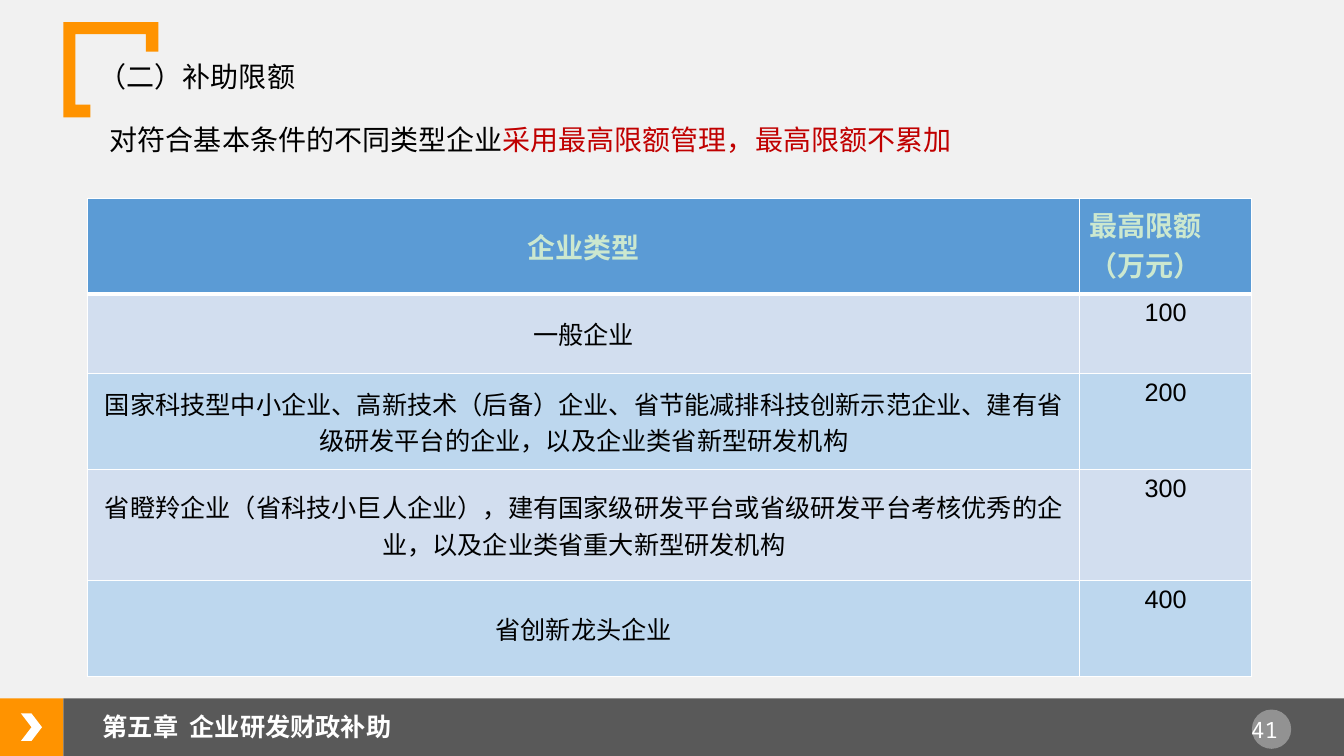
from lxml.etree import SubElement
from pptx import Presentation
from pptx.dml.color import RGBColor
from pptx.enum.shapes import MSO_SHAPE as Preset
from pptx.enum.text import MSO_ANCHOR as Anchor, PP_ALIGN as Align
from pptx.oxml.ns import qn
from pptx.util import Cm, Pt

COLORS = {
    "page": "F1F1F1", "orange": "FF9300", "bar": "595959", "white": "FFFFFF",
    "black": "000000", "red": "C00000", "pale": "CCE8CF", "head": "5B9BD5",
    "odd": "D2DEEF", "even": "BDD7EE",
}
LATIN, CHINESE, MONO = "Arial", "Noto Sans CJK SC", "Noto Sans Mono"

LIMITS = [
    ("企业类型", "最高限额\n（万元）"),
    ("一般企业", "100"),
    ("国家科技型中小企业、高新技术（后备）企业、省节能减排科技创新示范企业、建有省\n"
     "级研发平台的企业，以及企业类省新型研发机构", "200"),
    ("省瞪羚企业（省科技小巨人企业），建有国家级研发平台或省级研发平台考核优秀的企\n"
     "业，以及企业类省重大新型研发机构", "300"),
    ("省创新龙头企业", "400"),
]
COLUMN_WIDTHS = (25, 4.33)
ROW_HEIGHTS = (2.41, 2.01, 2.41, 2.8, 2.41)


def color(name):
    return RGBColor.from_string(COLORS[name])


class SlideBuilder:
    """Holds the text style and the current slide."""

    def __init__(self, slide, font=LATIN):
        self.slide = slide
        self.font = font
        slide.background.fill.solid()
        slide.background.fill.fore_color.rgb = color("page")

    def format_run(self, run, size, ink, bold=False, font=None):
        run.font.size, run.font.bold = Pt(size), bold
        run.font.name = font or self.font
        run.font.color.rgb = color(ink)
        SubElement(run.font._element, qn("a:ea"), typeface=CHINESE)

    def paint(self, shape, fill, alpha=None):
        shape.shadow.inherit = False
        shape.fill.solid()
        shape.fill.fore_color.rgb = color(fill)
        shape.line.fill.background()
        if alpha:
            tint = shape.fill._xPr.find(qn("a:solidFill"))[0]
            SubElement(tint, qn("a:alpha"), val=str(alpha * 1000))

    def shape(self, preset, left, top, width, height, fill, alpha=None):
        box = (Cm(v) for v in (left, top, width, height))
        self.paint(self.slide.shapes.add_shape(preset, *box), fill, alpha)

    def outline(self, points, fill):
        corners = [(Cm(x), Cm(y)) for x, y in points]
        builder = self.slide.shapes.build_freeform(*corners[0])
        builder.add_line_segments(corners[1:], close=True)
        self.paint(builder.convert_to_shape(), fill)

    def title(self, text, left, top, width, height, size):
        heading = self.slide.shapes.title
        heading.left, heading.top = Cm(left), Cm(top)
        heading.width, heading.height = Cm(width), Cm(height)
        frame = heading.text_frame
        frame.text = text
        frame.vertical_anchor, frame.margin_left = Anchor.TOP, Cm(0.41)
        line = frame.paragraphs[0]
        line.alignment, line.line_spacing = Align.LEFT, 0.9
        self.format_run(line.runs[0], size, "black", font=CHINESE)

    def text(self, parts, left, top, width, height, size,
             bold=False, font=None, align=Align.LEFT):
        box = (Cm(v) for v in (left, top, width, height))
        frame = self.slide.shapes.add_textbox(*box).text_frame
        frame.word_wrap = True
        line = frame.paragraphs[0]
        line.alignment = align
        for words, ink in parts:
            run = line.add_run()
            run.text = words
            self.format_run(run, size, ink, bold, font)

    def border(self, cell, bottom):
        props = cell._tc.get_or_add_tcPr()
        for place, (side, width) in enumerate(
                (("lnL", 1), ("lnR", 1), ("lnT", 1), ("lnB", bottom))):
            edge = props.makeelement(qn(f"a:{side}"), {"w": str(Pt(width))})
            fill = SubElement(edge, qn("a:solidFill"))
            SubElement(fill, qn("a:srgbClr"), val=COLORS["white"])
            props.insert(place, edge)

    def table(self, rows, left, top, widths, heights):
        size = (Cm(sum(widths)), Cm(sum(heights)))
        grid = self.slide.shapes.add_table(
            len(rows), len(widths), Cm(left), Cm(top), *size).table
        for column, width in zip(grid.columns, widths):
            column.width = Cm(width)
        for r, (row, height) in enumerate(zip(rows, heights)):
            grid.rows[r].height = Cm(height)
            header = r == 0
            band = "head" if header else ("even", "odd")[r % 2]
            for c, words in enumerate(row):
                cell = grid.cell(r, c)
                cell.fill.solid()
                cell.fill.fore_color.rgb = color(band)
                cell.vertical_anchor = Anchor.TOP if c else Anchor.MIDDLE
                # The rule under the header is heavier, seen from both rows
                self.border(cell, 3 if header else 1)
                if r == 1:
                    cell._tc.tcPr.find(qn("a:lnT")).set("w", str(Pt(3)))
                cell.text_frame.text = words
                for line in cell.text_frame.paragraphs:
                    line.alignment = Align.LEFT if header and c else Align.CENTER
                    self.format_run(line.runs[0], 20 if header else 18,
                                    "pale" if header else "black", header)


def main():
    deck = Presentation()
    deck.slide_width, deck.slide_height = Cm(33.87), Cm(19.05)
    page = SlideBuilder(deck.slides.add_slide(deck.slide_layouts[5]))

    # Footer bar with page number
    page.shape(Preset.RECTANGLE, 0, 17.6, 1.6, 1.45, "orange")
    page.shape(Preset.RECTANGLE, 1.6, 17.6, 32.27, 1.45, "bar")
    page.shape(Preset.CHEVRON, 0.53, 17.98, 0.53, 0.69, "white")
    page.shape(Preset.OVAL, 31.55, 17.88, 0.99, 0.99, "white", alpha=35)
    page.text([("41", "white")], 30.97, 17.91, 1.8, 0.94, 16,
              font=MONO, align=Align.CENTER)

    # Corner bracket
    page.outline([(1.6, 0.56), (3.99, 0.56), (3.99, 1.3), (3.68, 1.3),
                  (3.68, 0.86), (1.9, 0.86), (1.9, 2.64), (2.28, 2.64),
                  (2.28, 2.96), (1.6, 2.96)], "orange")

    # Heading and rule
    page.title("（二）补助限额", 2.08, 1.47, 29.2, 1.47, 20)
    page.text([("对符合基本条件的不同类型企业", "black"),
               ("采用最高限额管理，最高限额不累加", "red")],
              2.52, 2.95, 30.2, 1.12, 20)

    # Limits by type of enterprise
    page.table(LIMITS, 2.21, 5, COLUMN_WIDTHS, ROW_HEIGHTS)

    # Chapter name
    page.text([("第五章  企业研发财政补助", "white")],
              2.34, 17.8, 8.8, 1.02, 18, bold=True)

    deck.save("out.pptx")


if __name__ == "__main__":
    main()
